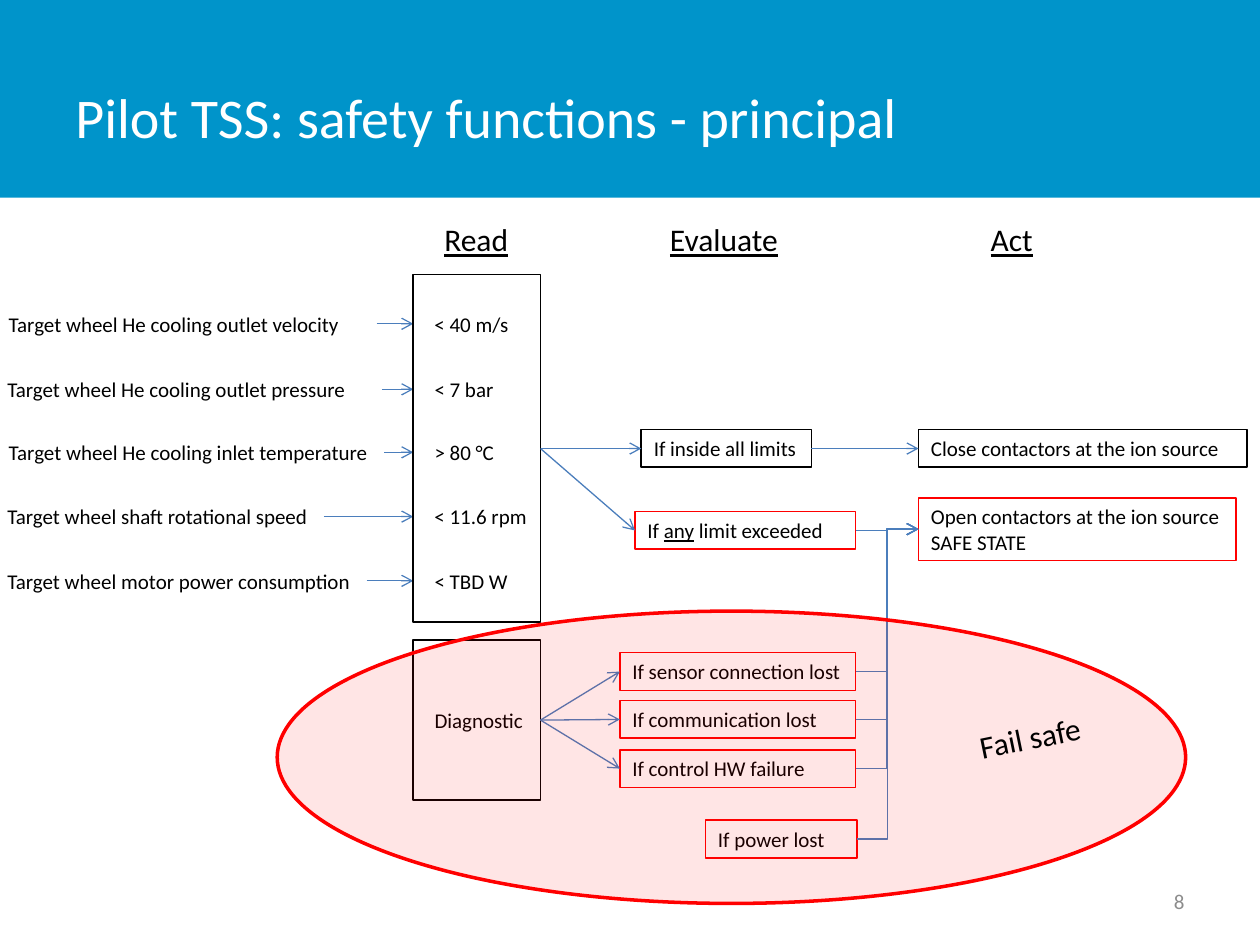
from pptx import Presentation
from pptx.dml.color import RGBColor
from pptx.enum import shapes, text
from pptx.oxml import ns
from pptx.util import Inches, Pt
from lxml import etree

BLACK = RGBColor(0, 0, 0)
WHITE = RGBColor(0xFF, 0xFF, 0xFF)
GREY = RGBColor(0x8C, 0x8C, 0x8C)
BANNER_BLUE = RGBColor(0x00, 0x94, 0xCA)
ARROW_BLUE = RGBColor(0x4B, 0x7E, 0xBC)
RED = RGBColor(0xFF, 0, 0)

FONT = "Calibri"
ROW_HEIGHT = 0.3
READ_LEFT, READ_WIDTH = 3.28, 1.01
LIMIT_LEFT = 3.35
HEADING_TOP = 1.7

SENSORS = [
    ("Target wheel He cooling outlet velocity", -0.03, 2.42, 2.85, 2.99, "< 40 m/s", 0.8),
    ("Target wheel He cooling outlet pressure", -0.04, 2.94, 2.91, 3.03, "< 7 bar", 0.68),
    ("Target wheel He cooling inlet temperature", -0.03, 3.44, 3.08, 3.05, "> 80 °C", 0.68),
    ("Target wheel shaft rotational speed", -0.04, 3.95, 2.61, 2.57, "< 11.6 rpm", 0.94),
    ("Target wheel motor power consumption", -0.04, 4.46, 2.95, 2.91, "< TBD W", 0.79),
]
HEADINGS = [("Read", 3.03, 1.5, 3.15), ("Evaluate", 4.84, 1.81, 3.31), ("Act", 6.85, 2.36, 3.31)]
DIAGNOSES = [
    ("If sensor connection lost", 5.18),
    ("If communication lost", 5.56),
    ("If control HW failure", 5.95),
]


def write(frame, runs, size, color=BLACK, align=text.PP_ALIGN.LEFT, underlined=None):
    paragraph = frame.paragraphs[0]
    paragraph.alignment = align
    for words in runs:
        run = paragraph.add_run()
        run.text = words
        run.font.name = FONT
        run.font.size = Pt(size)
        run.font.color.rgb = color
        if words == underlined:
            run.font.underline = True


def add_text(slide, words, left, top, width, height, size, color=BLACK,
             align=text.PP_ALIGN.LEFT, anchor=text.MSO_ANCHOR.TOP, underlined=None):
    area = slide.shapes.add_textbox(Inches(left), Inches(top), Inches(width), Inches(height))
    area.text_frame.word_wrap = True
    area.text_frame.vertical_anchor = anchor
    write(area.text_frame, [words], size, color, align, underlined)
    return area


def add_label(slide, words, left, top, width, height=ROW_HEIGHT, size=12):
    label = add_text(slide, words, left, top, width, height, size)
    label.text_frame.word_wrap = False
    label.text_frame.auto_size = text.MSO_AUTO_SIZE.SHAPE_TO_FIT_TEXT
    return label


def add_outline(slide, preset, left, top, width, height, color, weight=1):
    outline = slide.shapes.add_shape(
        preset, Inches(left), Inches(top), Inches(width), Inches(height))
    outline.shadow.inherit = False
    outline.fill.background()
    outline.line.color.rgb = color
    outline.line.width = Pt(weight)
    return outline


def add_box(slide, runs, left, top, width, height=ROW_HEIGHT, color=BLACK, underlined=None):
    box = add_outline(slide, shapes.MSO_SHAPE.RECTANGLE, left, top, width, height, color)
    if runs:
        box.text_frame.word_wrap = True
        box.text_frame.vertical_anchor = text.MSO_ANCHOR.TOP
        write(box.text_frame, runs, 12, underlined=underlined)
    return box


def add_arrow(slide, start, end, kind=shapes.MSO_CONNECTOR.STRAIGHT):
    arrow = slide.shapes.add_connector(kind, *map(Inches, start + end))
    arrow.line.color.rgb = ARROW_BLUE
    arrow.line.width = Pt(0.75)
    properties = arrow._element.spPr
    etree.SubElement(properties.find(ns.qn("a:ln")), ns.qn("a:tailEnd"), type="arrow")
    etree.SubElement(properties, ns.qn("a:effectLst"))
    return arrow


def join(slide, source, target, kind=shapes.MSO_CONNECTOR.STRAIGHT):
    arrow = add_arrow(slide, (0, 0), (1, 1), kind)
    arrow.begin_connect(source, 3)
    arrow.end_connect(target, 1)


def add_banner(slide):
    banner = add_outline(slide, shapes.MSO_SHAPE.RECTANGLE, 0, 0, 10, 1.57, BANNER_BLUE)
    banner.fill.solid()
    banner.fill.fore_color.rgb = BANNER_BLUE
    banner.line.fill.background()
    add_text(slide, "Pilot TSS: safety functions - principal", 0.5, 0.3, 7.81, 1.25,
             32, WHITE, anchor=text.MSO_ANCHOR.MIDDLE)


def add_sensors(slide):
    for sensor, left, top, width, arrow_left, limit, limit_width in SENSORS:
        label = add_label(slide, sensor, left, top, width)
        add_label(slide, limit, LIMIT_LEFT, top, limit_width)
        middle = top + ROW_HEIGHT / 2
        arrow = add_arrow(slide, (arrow_left, middle), (READ_LEFT, middle))
        if abs(left + width - arrow_left) < 0.01:
            arrow.begin_connect(label, 3)


def add_fail_safe(slide):
    zone = add_outline(slide, shapes.MSO_SHAPE.OVAL, 2.2, 4.85, 7.21, 2.32, RED, 2)
    zone.fill.solid()
    zone.fill.fore_color.rgb = RED
    tint = zone._element.spPr.find(ns.qn("a:solidFill"))[0]
    etree.SubElement(tint, ns.qn("a:alpha"), val="10000")
    add_label(slide, "Fail safe", 7.67, 5.65, 1.02, 0.4, 18).rotation = 348.4


def main():
    deck = Presentation()
    deck.slide_width, deck.slide_height = Inches(10), Inches(7.5)
    slide = deck.slides.add_slide(deck.slide_layouts[6])

    add_banner(slide)
    add_text(slide, "8", 7.17, 6.95, 2.33, 0.4, 12, GREY,
             text.PP_ALIGN.RIGHT, text.MSO_ANCHOR.MIDDLE)
    for heading, left, width, height in HEADINGS:
        add_text(slide, heading, left, HEADING_TOP, width, height, 18,
                 align=text.PP_ALIGN.CENTER, underlined=heading)

    add_sensors(slide)
    readings = add_box(slide, [], READ_LEFT, 2.18, READ_WIDTH, 2.76)
    inside = add_box(slide, ["If inside all limits"], 5.09, 3.41, 1.35)
    exceeded = add_box(slide, ["If ", "any", " limit exceeded"], 5.04, 4.06, 1.75,
                       color=RED, underlined="any")
    close = add_box(slide, ["Close contactors at the ion source"], 7.29, 3.41, 2.61)
    safe_state = add_box(slide, ["Open contactors at the ion source SAFE STATE"],
                         7.29, 3.95, 2.52, 0.5, RED)
    for source, target in [(readings, inside), (inside, close), (readings, exceeded)]:
        join(slide, source, target)

    diagnostic = add_box(slide, [], READ_LEFT, 5.08, READ_WIDTH, 1.27)
    add_label(slide, "Diagnostic", LIMIT_LEFT, 5.57, 0.91)
    failures = [add_box(slide, [words], 4.92, top, 1.87, color=RED)
                for words, top in DIAGNOSES]
    for failure in failures:
        join(slide, diagnostic, failure)
    power_lost = add_box(slide, ["If power lost"], 5.6, 6.51, 1.2, color=RED)
    for trigger in [exceeded, *failures, power_lost]:
        join(slide, trigger, safe_state, shapes.MSO_CONNECTOR.ELBOW)

    add_fail_safe(slide)
    deck.save("out.pptx")


if __name__ == "__main__":
    main()
